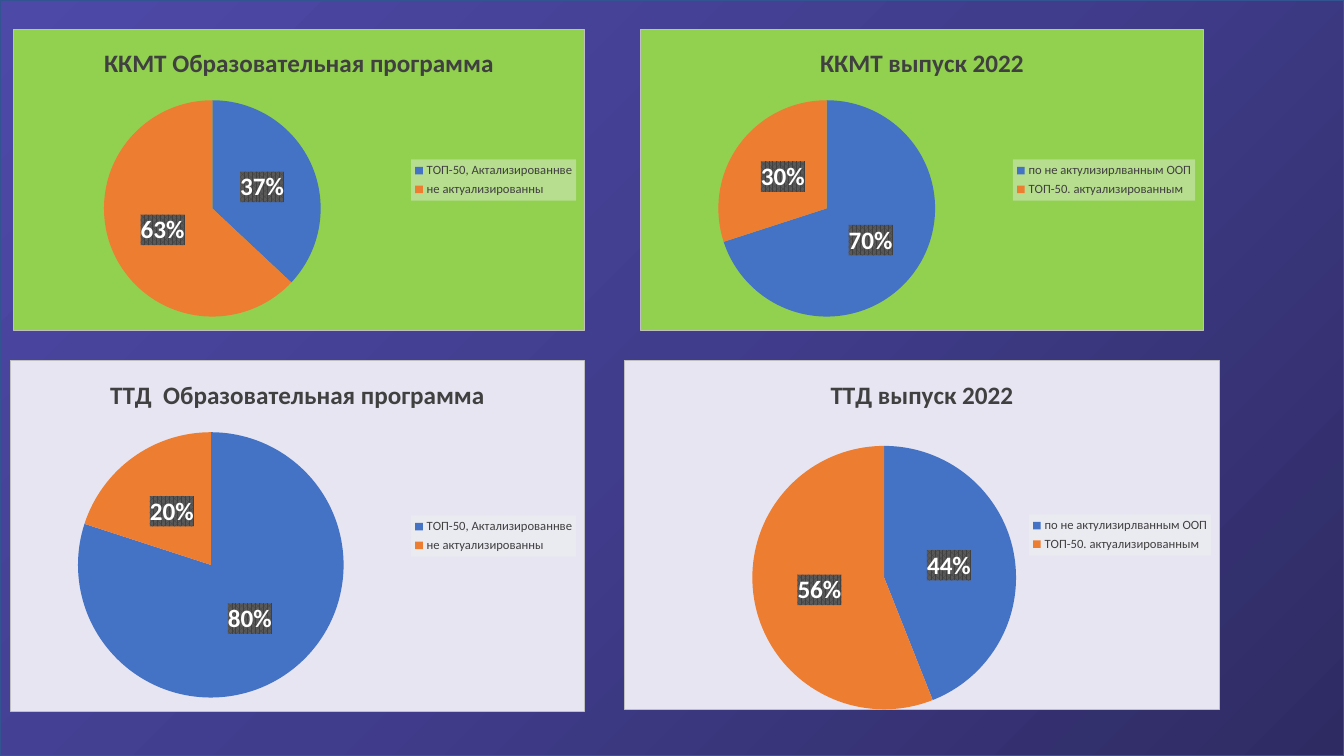
from pptx import Presentation
from pptx.chart.data import CategoryChartData
from pptx.dml.color import RGBColor
from pptx.enum.chart import XL_CHART_TYPE as Kind, XL_LABEL_POSITION as LabelPos
from pptx.enum.chart import XL_LEGEND_POSITION as LegendPos
from pptx.enum.shapes import MSO_SHAPE as Shape
from pptx.oxml import parse_xml
from pptx.oxml.ns import nsdecls, qn
from pptx.util import Pt

PX = 914400 / 100.8
WIDTH, HEIGHT = 1344, 756
FONT = "Calibri"

BLACK = RGBColor(0x00, 0x00, 0x00)
WHITE = RGBColor(0xFF, 0xFF, 0xFF)
DARK_GREY = RGBColor(0x40, 0x40, 0x40)
MID_GREY = RGBColor(0x59, 0x59, 0x59)
LIGHT_GREY = RGBColor(0xF2, 0xF2, 0xF2)
BORDER_GREY = RGBColor(0xBF, 0xBF, 0xBF)
GREEN = RGBColor(0x92, 0xD0, 0x50)
LAVENDER = RGBColor(0xE6, 0xE5, 0xF1)
BLUE = RGBColor(0x44, 0x72, 0xC4)
ORANGE = RGBColor(0xED, 0x7D, 0x31)
OUTLINE = RGBColor(0x32, 0x54, 0x91)
NIGHT = RGBColor(0x2E, 0x2B, 0x63)
INDIGO = RGBColor(0x41, 0x3D, 0x8D)
VIOLET = RGBColor(0x4D, 0x49, 0xA7)

PROGRAMME = ("ТОП-50, Актализированнве", "не актуализированны")
GRADUATES = ("по не актулизирлванным ООП", "ТОП-50. актуализированным")
CHARTS = (
    ("ТТД  Образовательная программа", PROGRAMME, (80, 20), LAVENDER, (10, 360, 575, 352), None),
    ("ТТД выпуск 2022", GRADUATES, (44, 56), LAVENDER, (624, 360, 596, 350),
     (0.21, 0.245, 0.453, 0.755)),
    ("ККМТ Образовательная программа", PROGRAMME, (37, 63), GREEN, (13, 29, 572, 302), None),
    ("ККМТ выпуск 2022", GRADUATES, (70, 30), GREEN, (640, 29, 564, 302), None),
)


class Deck:
    """Holds the chart style and the current slide."""

    def __init__(self):
        self.prs = Presentation()
        self.prs.slide_width, self.prs.slide_height = self.emu(WIDTH, HEIGHT)
        self.slide = self.prs.slides.add_slide(self.prs.slide_layouts[6])

    def emu(self, *lengths):
        return [round(length * PX) for length in lengths]

    def style(self, font, size, color, bold=False):
        font.name, font.size, font.bold = FONT, Pt(size), bold
        font.color.rgb = color

    def solid(self, color, alpha=100):
        return (f'<a:solidFill><a:srgbClr val="{color}">'
                f'<a:alpha val="{alpha * 1000}"/></a:srgbClr></a:solidFill>')

    def paint(self, element, content):
        props = parse_xml(f'<c:spPr {nsdecls("c", "a")}>{content}</c:spPr>')
        element.find(qn("c:txPr")).addprevious(props)

    def backdrop(self):
        s = self.slide.shapes.add_shape(Shape.RECTANGLE, 0, 0, *self.emu(WIDTH, HEIGHT))
        s.shadow.inherit = False
        s.line.color.rgb, s.line.width = OUTLINE, Pt(1)
        s.fill.background()
        stops = "".join(
            f'<a:gs pos="{pos * 1000}"><a:srgbClr val="{color}"/></a:gs>'
            for pos, color in ((0, NIGHT), (50, INDIGO), (100, VIOLET)))
        gradient = parse_xml(
            f'<a:gradFill {nsdecls("a")} rotWithShape="1"><a:gsLst>{stops}</a:gsLst>'
            '<a:path path="circle"><a:fillToRect l="100000" t="100000"/></a:path></a:gradFill>')
        no_fill = s.element.spPr.find(qn("a:noFill"))
        no_fill.getparent().replace(no_fill, gradient)

    def place_plot(self, chart, box):
        area = chart.element.find(f'.//{qn("c:plotArea")}')
        for old in area.findall(qn("c:layout")):
            area.remove(old)
        sizes = "".join(f'<c:{tag} val="{value}"/>' for tag, value in zip("xywh", box))
        area.insert(0, parse_xml(
            f'<c:layout {nsdecls("c")}><c:manualLayout><c:layoutTarget val="inner"/>'
            f'<c:xMode val="edge"/><c:yMode val="edge"/>{sizes}</c:manualLayout></c:layout>'))

    def pie(self, title, categories, values, fill, box, plot_box):
        data = CategoryChartData()
        data.categories = categories
        data.add_series(title, values)
        frame = self.slide.shapes.add_chart(Kind.PIE, *self.emu(*box), data)
        chart = frame.chart
        self.style(chart.font, 10, BLACK)
        border = f'<a:ln w="{Pt(0.75)}">{self.solid(BORDER_GREY)}</a:ln>'
        self.paint(chart.element, self.solid(fill) + border)

        chart.has_title = True
        r = chart.chart_title.text_frame.paragraphs[0].add_run()
        r.text = title
        self.style(r.font, 18, DARK_GREY, True)

        chart.has_legend = True
        legend = chart.legend
        legend.position, legend.include_in_layout = LegendPos.RIGHT, False
        self.style(legend.font, 9, DARK_GREY)
        self.paint(chart.element.find(f'.//{qn("c:legend")}'), self.solid(LIGHT_GREY, 39))

        plot = chart.plots[0]
        plot.vary_by_categories = True
        series = plot.series[0]
        for index, color in enumerate((BLUE, ORANGE)):
            slice_fill = series.points[index].format.fill
            slice_fill.solid()
            slice_fill.fore_color.rgb = color
        self.percent_labels(series.data_labels, chart)
        if plot_box:
            self.place_plot(chart, plot_box)

    def percent_labels(self, labels, chart):
        labels.show_percentage, labels.show_value = True, False
        labels.number_format, labels.number_format_is_linked = "0%", False
        labels.position = LabelPos.CENTER
        self.style(labels.font, 18, WHITE, True)
        self.paint(
            chart.element.find(f'.//{qn("c:dLbls")}'),
            f'<a:pattFill prst="pct75"><a:fgClr><a:srgbClr val="{DARK_GREY}"/></a:fgClr>'
            f'<a:bgClr><a:srgbClr val="{MID_GREY}"/></a:bgClr></a:pattFill>')


def main():
    deck = Deck()
    deck.backdrop()
    for chart in CHARTS:
        deck.pie(*chart)
    deck.prs.save("out.pptx")


if __name__ == "__main__":
    main()
